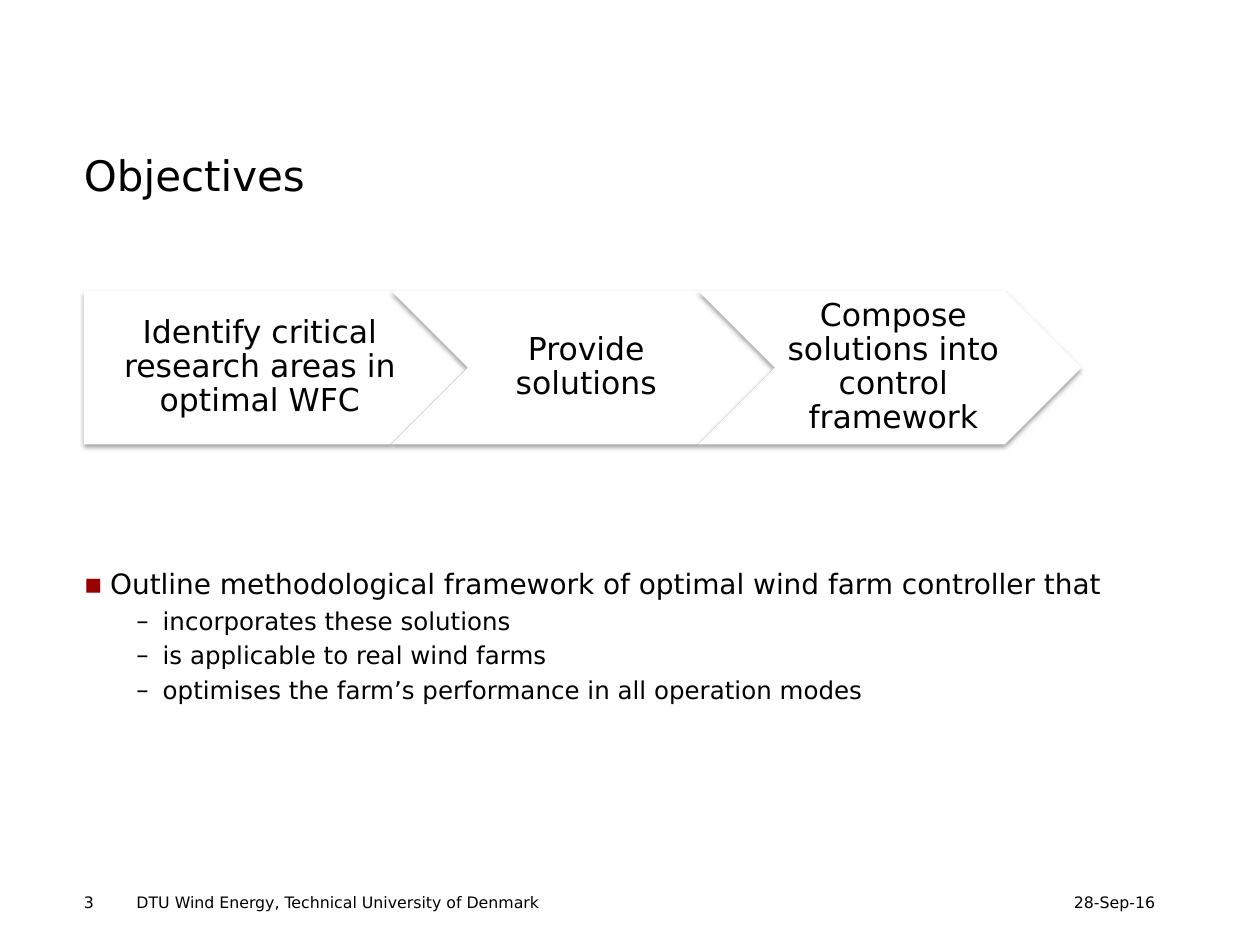
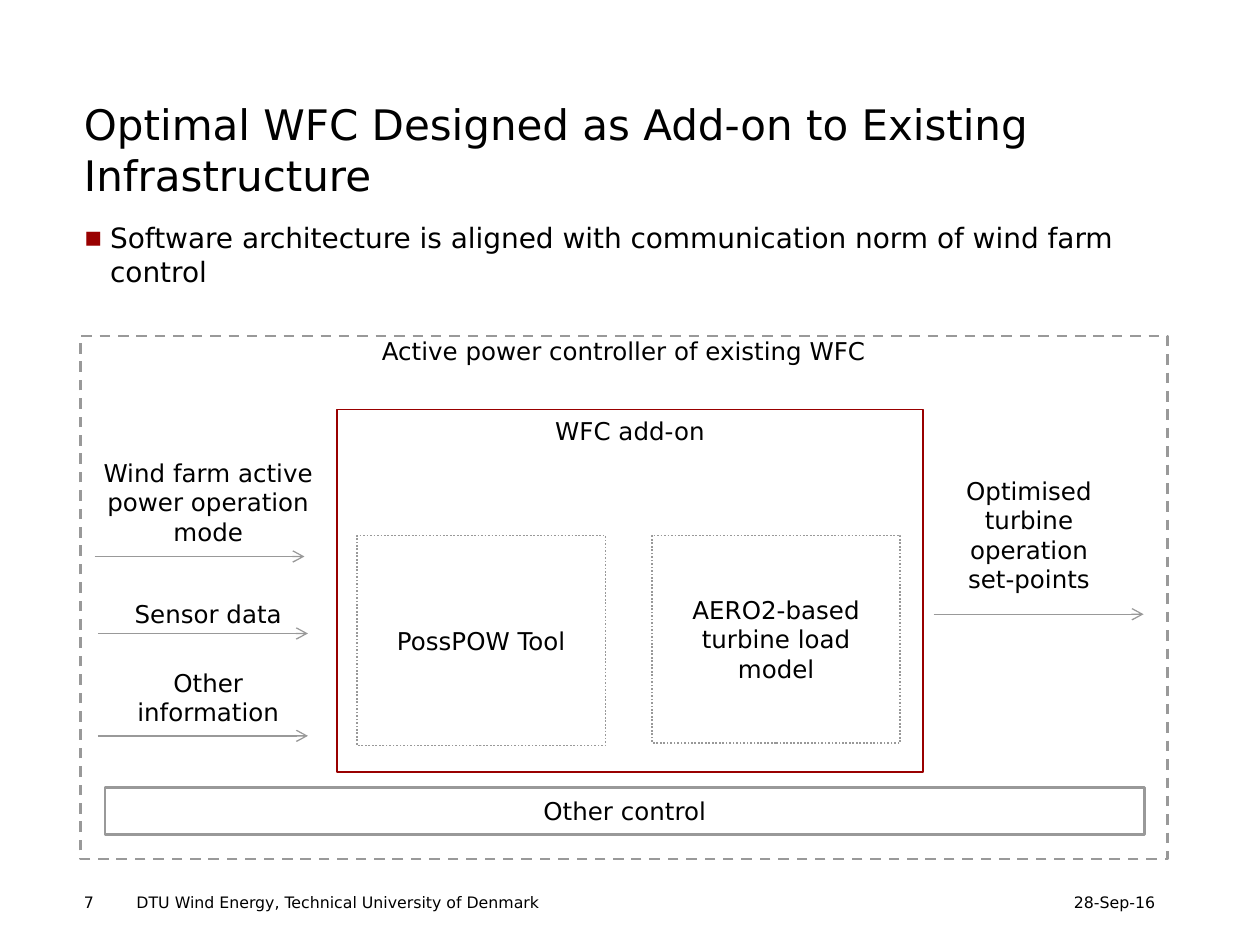
"""Build two slides on the objectives and architecture of an optimal wind farm controller."""
from dataclasses import dataclass
from typing import Optional

from lxml.etree import SubElement
from pptx import Presentation
from pptx.dml.color import RGBColor
from pptx.enum.dml import MSO_LINE
from pptx.enum.shapes import MSO_CONNECTOR, MSO_SHAPE
from pptx.enum.text import MSO_ANCHOR, PP_ALIGN
from pptx.oxml.ns import qn
from pptx.presentation import Presentation as Deck
from pptx.slide import Slide
from pptx.text.text import TextFrame
from pptx.util import Pt

COLORS = {"text": "000000", "surface": "FFFFFF", "accent": "990000", "rule": "999999"}
FONT = "DejaVu Sans"
FOOTER = "DTU Wind Energy, Technical University of Denmark"
DATE = "28-Sep-16"
NO_INSETS = (0, 0, 0, 0)
DEFAULT_INSETS = (7.2, 3.6, 7.2, 3.6)
MARGIN, CONTENT_WIDTH = 48, 612
BODY_BOTTOM = 485
STEP_TOP, STEP_WIDTH, STEP_HEIGHT, STEP_PITCH = 166.3, 219, 87.6, 175.5
FLOW_LENGTH = 120


@dataclass(frozen=True)
class Area:
    left: float
    top: float
    width: float
    height: float

    def lengths(self) -> tuple[Pt, Pt, Pt, Pt]:
        return Pt(self.left), Pt(self.top), Pt(self.width), Pt(self.height)


@dataclass(frozen=True)
class TextStyle:
    size: float = 14
    align: PP_ALIGN = PP_ALIGN.CENTER
    anchor: MSO_ANCHOR = MSO_ANCHOR.TOP
    insets: tuple[float, float, float, float] = DEFAULT_INSETS
    line_spacing: Optional[float] = None


@dataclass(frozen=True)
class Module:
    name: str
    area: Area
    outline: str
    weight: float
    style: TextStyle
    dash: Optional[MSO_LINE] = None


@dataclass(frozen=True)
class Flow:
    label: str
    label_area: Area
    left: float
    top: float


@dataclass(frozen=True)
class BulletLevel:
    mark: str
    size: float
    indent: float
    color: str


LEVELS = (BulletLevel("▪", 16, 15, "accent"), BulletLevel("–", 14, 45, "text"))
HANGING = 15

TITLE_STYLE = TextStyle(24, PP_ALIGN.LEFT, MSO_ANCHOR.BOTTOM, NO_INSETS)
FOOTER_STYLE = TextStyle(9, PP_ALIGN.LEFT, insets=NO_INSETS)
DATE_STYLE = TextStyle(9, PP_ALIGN.RIGHT, insets=NO_INSETS)
STEP_STYLE = TextStyle(18, anchor=MSO_ANCHOR.MIDDLE, insets=(6, 3.6, 2, 3.6), line_spacing=0.9)
LABEL_STYLE = TextStyle()
FRAME_STYLE = TextStyle(insets=NO_INSETS)
BAR_STYLE = TextStyle(anchor=MSO_ANCHOR.MIDDLE, insets=NO_INSETS)
TOOL_STYLE = TextStyle(anchor=MSO_ANCHOR.MIDDLE)

OBJECTIVES = [
    (0, "Outline methodological framework of optimal wind farm controller that"),
    (1, "incorporates these solutions"),
    (1, "is applicable to real wind farms"),
    (1, "optimises the farm’s performance in all operation modes"),
]
STEPS = [
    "Identify critical research areas in optimal WFC",
    "Provide solutions",
    "Compose solutions into control framework",
]
ARCHITECTURE = [
    (0, "Software architecture is aligned with communication norm of wind farm control"),
]
MODULES = [
    Module("Active power controller of existing WFC", Area(46, 192, 621, 299),
           "rule", 1.5, FRAME_STYLE, MSO_LINE.DASH),
    Module("Other control", Area(60, 450, 594, 27), "rule", 1.5, BAR_STYLE),
    Module("WFC add-on", Area(192.5, 234, 335, 207), "accent", 1, LABEL_STYLE),
    Module("PossPOW Tool", Area(204, 306, 142, 120), "rule", 1, TOOL_STYLE,
           MSO_LINE.ROUND_DOT),
    Module("AERO2-based turbine load model", Area(372.5, 306, 142, 118.5), "rule", 1,
           TOOL_STYLE, MSO_LINE.ROUND_DOT),
]
FLOWS = [
    Flow("Wind farm active\vpower operation mode", Area(51, 258, 136, 58), 54, 318),
    Flow("Sensor data", Area(64, 339, 110, 24), 56, 362),
    Flow("Other\vinformation", Area(64, 378, 110, 41), 56, 420.5),
    Flow("Optimised turbine\voperation\vset-points", Area(522, 268.5, 132, 75), 533.5, 351),
]


def rgb(name: str) -> RGBColor:
    return RGBColor.from_string(COLORS[name])


def format_runs(frame: TextFrame, size: float) -> None:
    for paragraph in frame.paragraphs:
        for run in paragraph.runs:
            run.font.name = FONT
            run.font.size = Pt(size)
            run.font.color.rgb = rgb("text")


def prepare_frame(frame: TextFrame, style: TextStyle) -> None:
    frame.word_wrap = True
    frame.vertical_anchor = style.anchor
    (frame.margin_left, frame.margin_top,
     frame.margin_right, frame.margin_bottom) = map(Pt, style.insets)


def write_text(frame: TextFrame, text: str, style: TextStyle) -> None:
    prepare_frame(frame, style)
    frame.text = text
    for paragraph in frame.paragraphs:
        paragraph.alignment = style.align
        if style.line_spacing:
            paragraph.line_spacing = style.line_spacing
    format_runs(frame, style.size)


def add_label(slide: Slide, text: str, area: Area, style: TextStyle) -> None:
    write_text(slide.shapes.add_textbox(*area.lengths()).text_frame, text, style)


def add_bullets(slide: Slide, top: float, items: list[tuple[int, str]]) -> None:
    area = Area(MARGIN, top, CONTENT_WIDTH, BODY_BOTTOM - top)
    frame = slide.shapes.add_textbox(*area.lengths()).text_frame
    prepare_frame(frame, FOOTER_STYLE)
    for index, (depth, text) in enumerate(items):
        level = LEVELS[depth]
        paragraph = frame.add_paragraph() if index else frame.paragraphs[0]
        properties = paragraph._p.get_or_add_pPr()
        properties.set("marL", str(Pt(level.indent)))
        properties.set("indent", str(-Pt(HANGING)))
        bullet_color = SubElement(properties, qn("a:buClr"))
        SubElement(bullet_color, qn("a:srgbClr"), val=COLORS[level.color])
        SubElement(properties, qn("a:buFont"), typeface=FONT)
        SubElement(properties, qn("a:buChar"), char=level.mark)
        paragraph.text = text
        if index:
            paragraph.space_before = Pt(3)
        for run in paragraph.runs:
            run.font.name = FONT
            run.font.size = Pt(level.size)
            run.font.color.rgb = rgb("text")


def add_step(slide: Slide, index: int, text: str) -> None:
    area = Area(MARGIN + index * STEP_PITCH, STEP_TOP, STEP_WIDTH, STEP_HEIGHT)
    outline = MSO_SHAPE.CHEVRON if index else MSO_SHAPE.PENTAGON
    step = slide.shapes.add_shape(outline, *area.lengths())
    step.fill.solid()
    step.fill.fore_color.rgb = rgb("surface")
    step.line.fill.background()
    effects = SubElement(step._element.spPr, qn("a:effectLst"))
    shadow = SubElement(effects, qn("a:outerShdw"), blurRad=str(Pt(3.1)), dist=str(Pt(1.6)),
                        dir="5400000", rotWithShape="0")
    shade = SubElement(shadow, qn("a:srgbClr"), val=COLORS["text"])
    SubElement(shade, qn("a:alpha"), val="38000")
    write_text(step.text_frame, text, STEP_STYLE)


def add_module(slide: Slide, module: Module) -> None:
    box = slide.shapes.add_shape(MSO_SHAPE.RECTANGLE, *module.area.lengths())
    box.shadow.inherit = False
    box.fill.solid()
    box.fill.fore_color.rgb = rgb("surface")
    box.line.color.rgb = rgb(module.outline)
    box.line.width = Pt(module.weight)
    if module.dash:
        box.line.dash_style = module.dash
    write_text(box.text_frame, module.name, module.style)


def add_flow(slide: Slide, flow: Flow) -> None:
    add_label(slide, flow.label, flow.label_area, LABEL_STYLE)
    arrow = slide.shapes.add_connector(
        MSO_CONNECTOR.STRAIGHT, Pt(flow.left), Pt(flow.top),
        Pt(flow.left + FLOW_LENGTH), Pt(flow.top))
    arrow.line.color.rgb = rgb("rule")
    arrow.line.width = Pt(0.75)
    SubElement(arrow.line._get_or_add_ln(), qn("a:tailEnd"), type="arrow")
    SubElement(arrow._element.spPr, qn("a:effectLst"))


def add_slide(deck: Deck, title: str, number: int) -> Slide:
    slide = deck.slides.add_slide(deck.slide_layouts[6])
    slide.background.fill.solid()
    slide.background.fill.fore_color.rgb = rgb("surface")
    add_label(slide, title, Area(MARGIN, 24, CONTENT_WIDTH, 90), TITLE_STYLE)
    add_label(slide, str(number), Area(MARGIN, 510, 24, 24), FOOTER_STYLE)
    add_label(slide, FOOTER, Area(78, 510, 333, 24), FOOTER_STYLE)
    add_label(slide, DATE, Area(600, 510, 60, 24), DATE_STYLE)
    return slide


def main() -> None:
    deck = Presentation()
    deck.slide_width, deck.slide_height = Pt(720), Pt(540)

    objectives = add_slide(deck, "Objectives", 3)
    add_bullets(objectives, 324, OBJECTIVES)
    for index, step in enumerate(STEPS):
        add_step(objectives, index, step)

    architecture = add_slide(
        deck, "Optimal WFC Designed as Add-on to Existing Infrastructure", 7)
    add_bullets(architecture, 126, ARCHITECTURE)
    for module in MODULES:
        add_module(architecture, module)
    for flow in FLOWS:
        add_flow(architecture, flow)

    deck.save("out.pptx")


if __name__ == "__main__":
    main()
